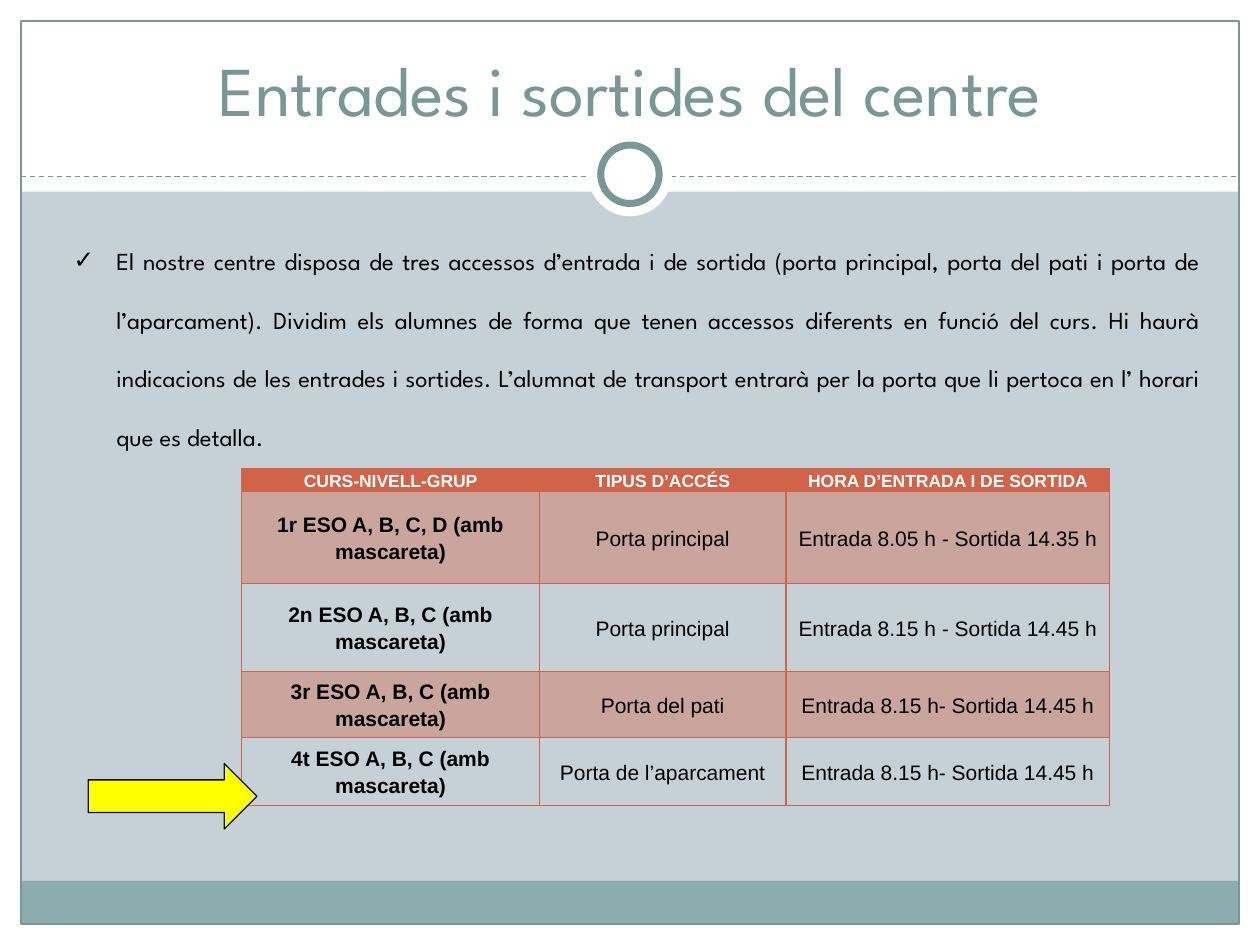
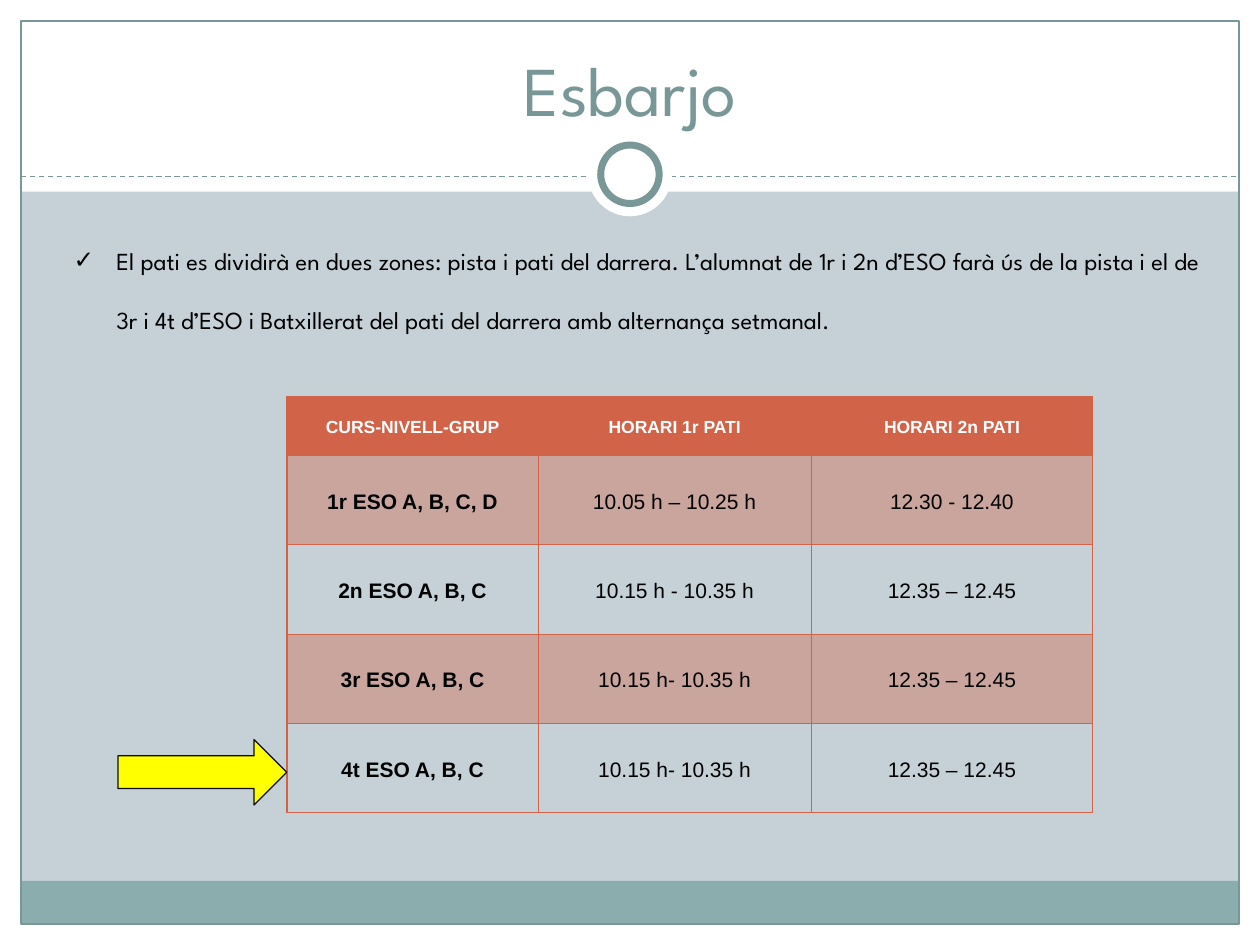
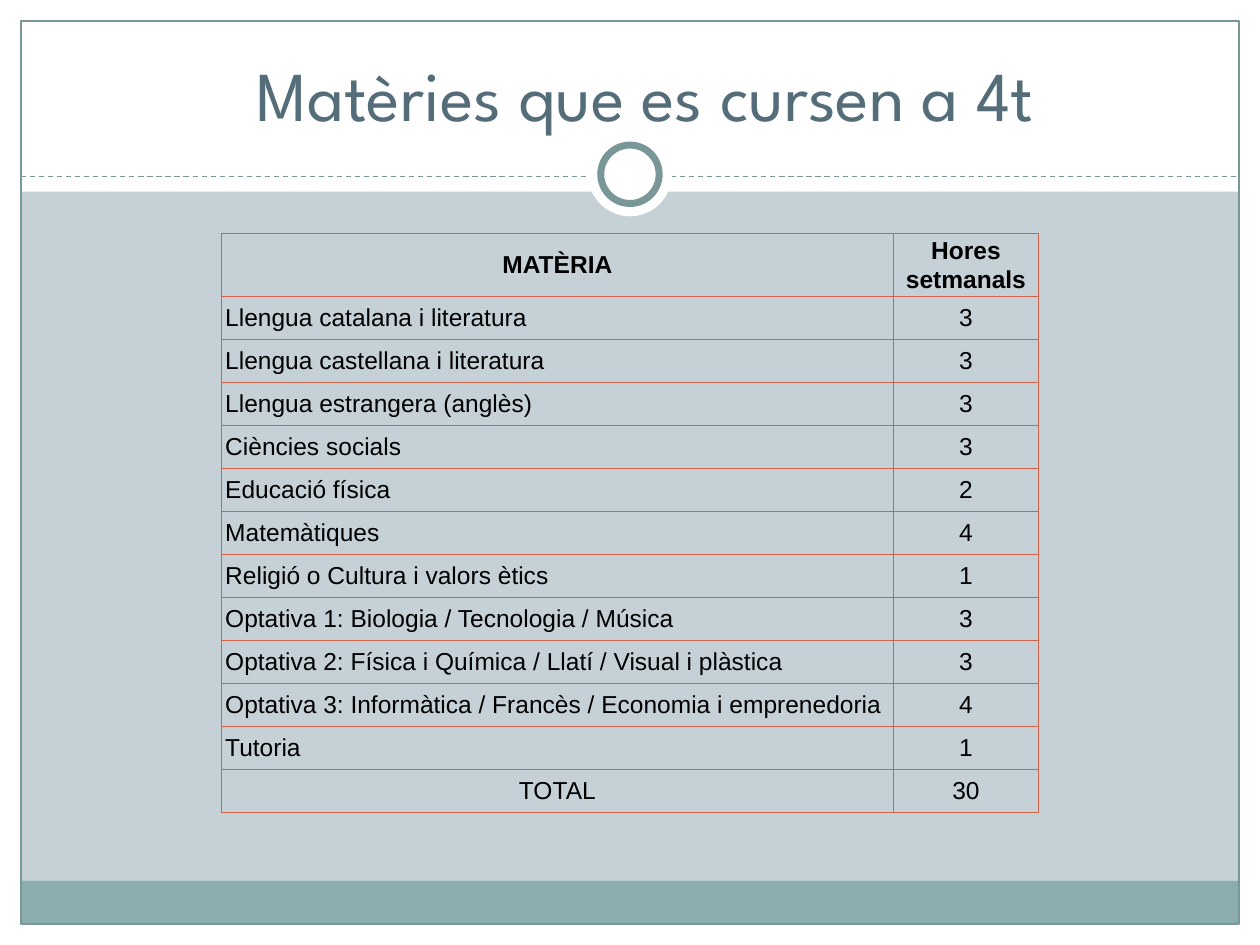
import pptx
import pptx.dml.color
import pptx.enum.dml
import pptx.enum.shapes
import pptx.enum.text
import pptx.oxml.ns
import pptx.util
from lxml import etree

Pt = pptx.util.Pt
qn = pptx.oxml.ns.qn
SHAPE = pptx.enum.shapes.MSO_SHAPE
ALIGN = pptx.enum.text.PP_ALIGN
ANCHOR = pptx.enum.text.MSO_ANCHOR

WHITE, BLACK = "FFFFFF", "000000"
PALE, TEAL, BAND = "C5D1D7", "7A9798", "8CADAE"
SLATE, RUST, YELLOW, INK = "546D79", "D16349", "FFFF00", "0C0C0C"
TITLE_FONT, TABLE_FONT = "League Spartan", "Arial"

FRAME = [
    (SHAPE.RECTANGLE, (0, 528, 720, 12), WHITE, None, 0),
    (SHAPE.RECTANGLE, (0, 0, 720, 109.5), WHITE, None, 0),
    (SHAPE.RECTANGLE, (0, 0, 12, 540), WHITE, None, 0),
    (SHAPE.RECTANGLE, (708, 0, 12, 540), WHITE, None, 0),
    (SHAPE.RECTANGLE, (12, 503.3, 696, 24.7), BAND, None, 0),
    (SHAPE.RECTANGLE, (12, 12, 696, 516), None, TEAL, 0.75),
    "dashes",
    (SHAPE.OVAL, (336, 75.6, 48, 48), WHITE, None, 0),
    (SHAPE.OVAL, (343.3, 82.9, 33.4, 33.4), WHITE, TEAL, 4),
]
DASHES = (12, 100.8, 708, 100.8)
TITLE_BOX = (24, 18, 672, 60)
BODY_BOX = (24, 120, 669.6, 360)
ARROW_SIZE = (96.5, 37.4)

SCHEDULE = {"size": 12, "head_size": 10, "head_color": WHITE, "spacing": 1.15,
            "margin": 5, "banded": True}
SUBJECTS = {"size": 14, "head_size": 14, "head_color": BLACK, "spacing": 1.05,
            "margin": 2.2, "banded": False}

SLIDES = [
    {
        "title": "Entrades i sortides del centre",
        "body": "El nostre centre disposa de tres accessos d’entrada i de sortida "
                "(porta principal, porta del pati i porta de l’aparcament). Dividim els "
                "alumnes de forma que tenen accessos diferents en funció del curs. Hi haurà "
                "indicacions de les entrades i sortides. L’alumnat de transport entrarà per "
                "la porta que li pertoca en l’ horari que es detalla.",
        "arrow": (50.4, 436.3),
        "style": SCHEDULE,
        "at": (138.2, 267.8),
        "cols": [170, 141, 185],
        "heights": [12.6, 52.6, 50.4, 37.6, 38.9],
        "rows": [
            ("CURS-NIVELL-GRUP", "TIPUS D’ACCÉS", "HORA D’ENTRADA I DE SORTIDA"),
            ("1r ESO A, B, C, D (amb mascareta)", "Porta principal",
             "Entrada 8.05 h - Sortida 14.35 h"),
            ("2n ESO A, B, C (amb mascareta)", "Porta principal",
             "Entrada 8.15 h - Sortida 14.45 h"),
            ("3r ESO A, B, C (amb mascareta)", "Porta del pati",
             "Entrada 8.15 h- Sortida 14.45 h"),
            ("4t ESO A, B, C (amb mascareta)", "Porta de l’aparcament",
             "Entrada 8.15 h- Sortida 14.45 h"),
        ],
    },
    {
        "title": "Esbarjo",
        "body": "El pati es dividirà en dues zones: pista i pati del darrera. L’alumnat de "
                "1r i 2n d’ESO farà ús de la pista i el de 3r i 4t d’ESO i Batxillerat del "
                "pati del darrera amb alternança setmanal.",
        "arrow": (67.4, 422.6),
        "style": SCHEDULE,
        "at": (164, 226.6),
        "cols": [143.5, 156, 161],
        "heights": [33.8] + [51] * 4,
        "rows": [
            ("CURS-NIVELL-GRUP", "HORARI 1r PATI", "HORARI 2n PATI"),
            ("1r ESO A, B, C, D", "10.05 h – 10.25 h", "12.30 - 12.40"),
            ("2n ESO A, B, C", "10.15 h - 10.35 h", "12.35 – 12.45"),
            ("3r ESO A, B, C", "10.15 h- 10.35 h", "12.35 – 12.45"),
            ("4t ESO A, B, C", "10.15 h- 10.35 h", "12.35 – 12.45"),
        ],
    },
    {
        "title": "Matèries que es cursen a 4t",
        "title_box": (25, 21, 643, 60),
        "title_color": SLATE,
        "title_indent": 44,
        "style": SUBJECTS,
        "at": (126.5, 133.2),
        "cols": [384, 83],
        "heights": [36] + [24.6] * 12,
        "rows": [
            ("MATÈRIA", "Hores setmanals"),
            ("Llengua catalana i literatura", "3"),
            ("Llengua castellana i literatura", "3"),
            ("Llengua estrangera (anglès)", "3"),
            ("Ciències socials", "3"),
            ("Educació física", "2"),
            ("Matemàtiques", "4"),
            ("Religió o Cultura i valors ètics", "1"),
            ("Optativa 1: Biologia / Tecnologia / Música", "3"),
            ("Optativa 2: Física i Química / Llatí / Visual i plàstica", "3"),
            ("Optativa 3: Informàtica / Francès / Economia i emprenedoria", "4"),
            ("Tutoria", "1"),
            ("TOTAL", "30"),
        ],
    },
]


def rgb(value):
    return pptx.dml.color.RGBColor.from_string(value)


def assign(obj, values):
    for name, value in values.items():
        setattr(obj, name, value)


def pts(values):
    return [Pt(v) for v in values]


def paint(fill, color):
    if color:
        fill.solid()
        fill.fore_color.rgb = rgb(color)
    else:
        fill.background()


def write(p, text, font, size, color, bold=False, **layout):
    r = p.add_run()
    r.text = text
    assign(r.font, {"name": font, "size": Pt(size), "bold": bold})
    r.font.color.rgb = rgb(color)
    assign(p, layout)


def add_shape(s, kind, box, fill, line, width):
    sp = s.shapes.add_shape(kind, *pts(box))
    sp.shadow.inherit = False
    paint(sp.fill, fill)
    paint(sp.line.fill, line)
    if line:
        sp.line.width = Pt(width)
    return sp


def add_dashes(s):
    c = s.shapes.add_connector(pptx.enum.shapes.MSO_CONNECTOR.STRAIGHT, *pts(DASHES))
    c.line.color.rgb = rgb(TEAL)
    assign(c.line, {"width": Pt(0.75), "dash_style": pptx.enum.dml.MSO_LINE.DASH})
    etree.SubElement(c.element.spPr, qn("a:effectLst"))
    return c


def build_master(prs, s):
    master = prs.slide_master
    paint(master.background.fill, PALE)
    for i, part in enumerate(FRAME):
        sp = add_dashes(s) if part == "dashes" else add_shape(s, *part)
        sp.element.xpath(".//p:cNvPr")[0].set("id", str(101 + i))
        master.shapes.element.insert(2 + i, sp.element)


def place(sp, box, anchor):
    assign(sp, dict(zip(("left", "top", "width", "height"), pts(box))))
    tf = sp.text_frame
    assign(tf, {
        "word_wrap": True, "auto_size": pptx.enum.text.MSO_AUTO_SIZE.NONE,
        "vertical_anchor": anchor, "margin_left": Pt(7.2), "margin_right": Pt(7.2),
        "margin_top": Pt(3.6), "margin_bottom": Pt(3.6),
    })
    return tf.paragraphs[0]


def set_indent(p, left, first):
    pPr = p._p.get_or_add_pPr()
    pPr.set("marL", str(Pt(left)))
    pPr.set("indent", str(Pt(first)))
    return pPr


def add_title(s, d):
    p = place(s.shapes.title, d.get("title_box", TITLE_BOX), ANCHOR.BOTTOM)
    write(p, d["title"], TITLE_FONT, 40, d.get("title_color", TEAL), alignment=ALIGN.CENTER)
    set_indent(p, 0, d.get("title_indent", 0))


def add_body(s, text):
    p = place(s.placeholders[1], BODY_BOX, ANCHOR.TOP)
    write(p, text, TITLE_FONT, 14, BLACK, alignment=ALIGN.JUSTIFY, level=1,
          line_spacing=2.0, space_before=Pt(3))
    pPr = set_indent(p, 35.3, -24.5)
    color = etree.SubElement(pPr, qn("a:buClr"))
    etree.SubElement(color, qn("a:srgbClr"), val=BLACK)
    etree.SubElement(pPr, qn("a:buChar"), char="✓")


def set_borders(cell):
    tcPr = cell._tc.get_or_add_tcPr()
    for side in ("lnL", "lnR", "lnT", "lnB"):
        ln = etree.SubElement(tcPr, qn("a:" + side), w=str(Pt(0.75)))
        fill = etree.SubElement(ln, qn("a:solidFill"))
        etree.SubElement(fill, qn("a:srgbClr"), val=RUST)


def fill_cell(cell, row, banded):
    paint(cell.fill, RUST if banded and (row == 0 or row % 2) else None)
    if banded and row % 2:
        color = cell._tc.tcPr.find(qn("a:solidFill"))[0]
        etree.SubElement(color, qn("a:alpha"), val="40000")


def add_table(s, d):
    style, rows, cols, heights = d["style"], d["rows"], d["cols"], d["heights"]
    box = (*d["at"], sum(cols), sum(heights))
    table = s.shapes.add_table(len(rows), len(cols), *pts(box)).table
    assign(table, {"first_row": False, "horz_banding": False})
    for col, width in zip(table.columns, cols):
        col.width = Pt(width)
    for i, (row, height) in enumerate(zip(rows, heights)):
        table.rows[i].height = Pt(height)
        for j, text in enumerate(row):
            cell = table.cell(i, j)
            assign(cell, {
                "margin_left": Pt(style["margin"]), "margin_right": Pt(style["margin"]),
                "margin_top": 0, "margin_bottom": 0, "vertical_anchor": ANCHOR.MIDDLE,
            })
            set_borders(cell)
            fill_cell(cell, i, style["banded"])
            head = i == 0
            listed = not style["banded"] and j == 0 and 0 < i < len(rows) - 1
            write(cell.text_frame.paragraphs[0], text, TABLE_FONT,
                  style["head_size"] if head else style["size"],
                  style["head_color"] if head else BLACK,
                  bold=head or (style["banded"] and j == 0),
                  alignment=ALIGN.LEFT if listed else ALIGN.CENTER,
                  line_spacing=style["spacing"])


def main():
    prs = pptx.Presentation()
    assign(prs, {"slide_width": Pt(720), "slide_height": Pt(540)})
    for i, d in enumerate(SLIDES):
        s = prs.slides.add_slide(prs.slide_layouts[1 if "body" in d else 5])
        if i == 0:
            build_master(prs, s)
        add_title(s, d)
        if "body" in d:
            add_body(s, d["body"])
        add_table(s, d)
        if "arrow" in d:
            add_shape(s, SHAPE.RIGHT_ARROW, d["arrow"] + ARROW_SIZE, YELLOW, INK, 0.75)
    prs.save("out.pptx")


if __name__ == "__main__":
    main()
